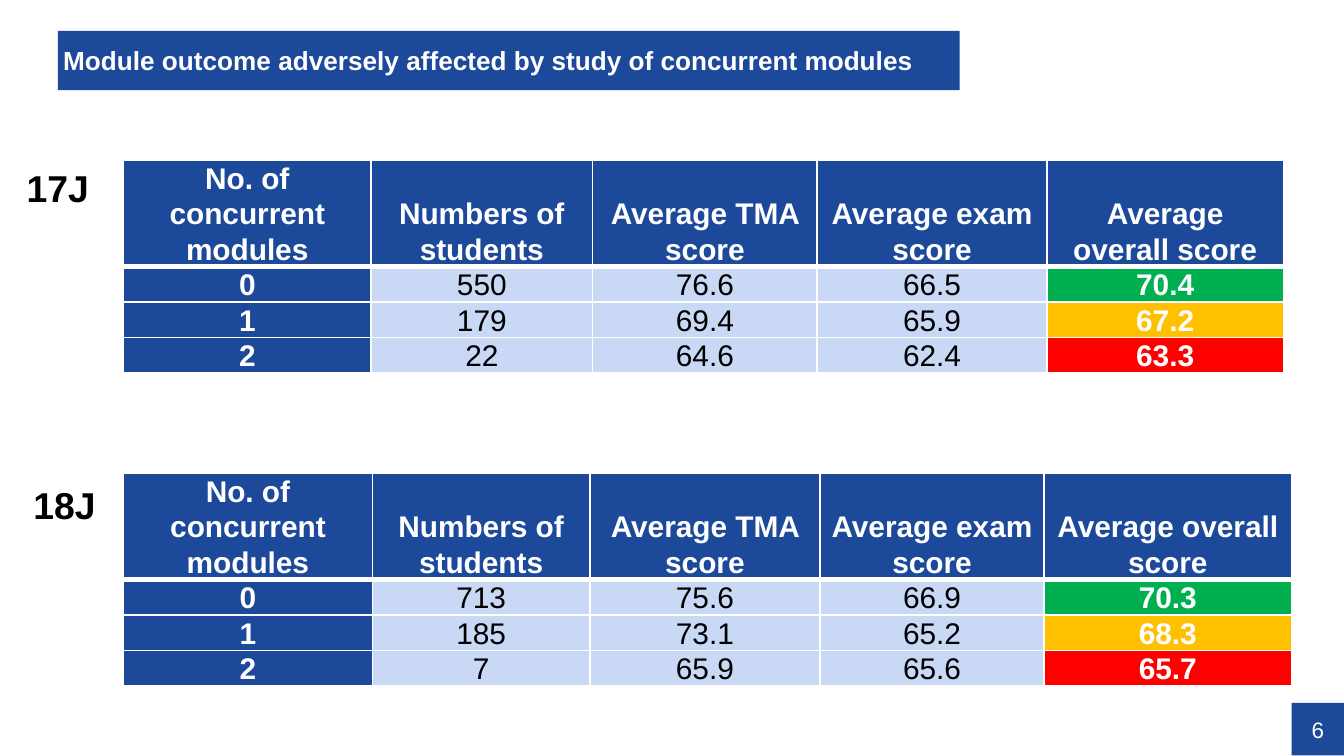
from lxml.etree import SubElement
from pptx import Presentation
from pptx.dml.color import RGBColor
from pptx.enum.shapes import MSO_SHAPE
from pptx.enum.text import MSO_ANCHOR, MSO_AUTO_SIZE, PP_ALIGN
from pptx.oxml.ns import qn
from pptx.util import Inches, Pt

COLORS = {
    "navy": "1D499B", "pale": "C8D8F5", "white": "FFFFFF", "black": "000000",
    "green": "00B050", "amber": "FFC000", "red": "FF0000",
}
HEADINGS = ["No. of concurrent modules", "Numbers of students",
            "Average TMA score", "Average exam score", "Average overall score"]
RATINGS = ["green", "amber", "red"]
ROW_HEIGHT = 0.21  # minimum; rows grow to fit their text
TABLE_HEIGHT = 1.65

# Each presentation: table top, column widths, rows
SCORES_17J = (1.19, [1.84, 1.65, 1.67, 1.71, 1.76],
              [["0", "550", "76.6", "66.5", "70.4"],
               ["1", "179", "69.4", "65.9", "67.2"],
               ["2", "22", "64.6", "62.4", "63.3"]])
SCORES_18J = (3.52, [1.85, 1.62, 1.71, 1.67, 1.84],
              [["0", "713", "75.6", "66.9", "70.3"],
               ["1", "185", "73.1", "65.2", "68.3"],
               ["2", "7", "65.9", "65.6", "65.7"]])


def rgb(name):
    return RGBColor.from_string(COLORS[name])


def fill_solid(target, color):
    target.fill.solid()
    target.fill.fore_color.rgb = rgb(color)


def set_margins(target, left, top, right, bottom):
    margins = {"left": left, "top": top, "right": right, "bottom": bottom}
    for side, inches in margins.items():
        setattr(target, f"margin_{side}", Inches(inches))


def write(frame, text, size, color, bold=False, align=PP_ALIGN.LEFT, spacing=1.0):
    paragraph = frame.paragraphs[0]
    paragraph.alignment = align
    paragraph.line_spacing = spacing
    run = paragraph.add_run()
    run.text = text
    font_format = {"name": "Arial", "size": Pt(size), "bold": bold}
    for attribute, value in font_format.items():
        setattr(run.font, attribute, value)
    run.font.color.rgb = rgb(color)


def add_title(slide, text):
    title = slide.shapes.title
    place = {"left": 0.43, "top": 0.23, "width": 6.71, "height": 0.44}
    for attribute, inches in place.items():
        setattr(title, attribute, Inches(inches))
    fill_solid(title, "navy")
    frame = title.text_frame
    frame.auto_size = MSO_AUTO_SIZE.NONE
    frame.vertical_anchor = MSO_ANCHOR.MIDDLE
    set_margins(frame, 0.04, 0.02, 0, 0)
    write(frame, text, 14, "white", bold=True, spacing=0.9)


def add_label(slide, text, left, top, height):
    frame = slide.shapes.add_textbox(
        Inches(left), Inches(top), Inches(0.67), Inches(height)).text_frame
    frame.word_wrap = False
    frame.auto_size = MSO_AUTO_SIZE.SHAPE_TO_FIT_TEXT
    write(frame, text, 20, "black", bold=True)


def add_borders(cell, row):
    # A thick rule separates the header from the body
    widths = {"lnL": 1, "lnR": 1, "lnT": 3 if row == 1 else 1, "lnB": 3 if row == 0 else 1}
    properties = cell._tc.get_or_add_tcPr()
    for tag, width in widths.items():
        line = SubElement(properties, qn(f"a:{tag}"), w=str(Pt(width)))
        solid = SubElement(line, qn("a:solidFill"))
        SubElement(solid, qn("a:srgbClr"), val=COLORS["white"])


def cell_style(row, column, last_column):
    """Return fill, font colour and boldness for a cell."""
    if row == 0 or column == 0:
        return "navy", "white", True
    if column == last_column:
        return RATINGS[row - 1], "white", True
    return "pale", "black", False


def add_score_table(slide, top, widths, rows):
    content = [HEADINGS, *rows]
    table_frame = slide.shapes.add_table(
        len(content), len(widths), Inches(0.92), Inches(top),
        Inches(sum(widths)), Inches(TABLE_HEIGHT))
    table = table_frame.table
    for column, width in zip(table.columns, widths):
        column.width = Inches(width)
    for table_row in table.rows:
        table_row.height = Inches(ROW_HEIGHT)
    table_frame.height = Inches(TABLE_HEIGHT)
    for r, values in enumerate(content):
        for c, value in enumerate(values):
            cell = table.cell(r, c)
            fill, color, bold = cell_style(r, c, len(widths) - 1)
            add_borders(cell, r)
            fill_solid(cell, fill)
            set_margins(cell, 0.07, 0, 0.07, 0)
            cell.vertical_anchor = MSO_ANCHOR.BOTTOM
            write(cell.text_frame, value, 16, color, bold, PP_ALIGN.CENTER, 1.07)


def add_page_number(slide, number):
    badge = slide.shapes.add_shape(
        MSO_SHAPE.RECTANGLE, Inches(9.61), Inches(5.23), Inches(0.39), Inches(0.39))
    badge.shadow.inherit = False
    fill_solid(badge, "navy")
    badge.line.fill.background()
    set_margins(badge.text_frame, 0, 0, 0, 0)
    badge.text_frame.vertical_anchor = MSO_ANCHOR.MIDDLE
    write(badge.text_frame, number, 12, "white", align=PP_ALIGN.CENTER)


def main():
    # Widescreen, 16:9
    deck = Presentation()
    deck.slide_width = Inches(10)
    deck.slide_height = Inches(10) * 9 // 16
    slide = deck.slides.add_slide(deck.slide_layouts[0])

    # Heading; the subtitle is not needed
    subtitle = slide.placeholders[1].element
    subtitle.getparent().remove(subtitle)
    add_title(slide, "Module outcome adversely affected by study of concurrent modules")

    # Score tables and page number
    add_score_table(slide, *SCORES_17J)
    add_page_number(slide, "6")
    add_score_table(slide, *SCORES_18J)

    # Presentation labels
    add_label(slide, "17J", 0.1, 1.18, 0.44)
    add_label(slide, "18J", 0.15, 3.54, 0.64)

    deck.save("out.pptx")


if __name__ == "__main__":
    main()
